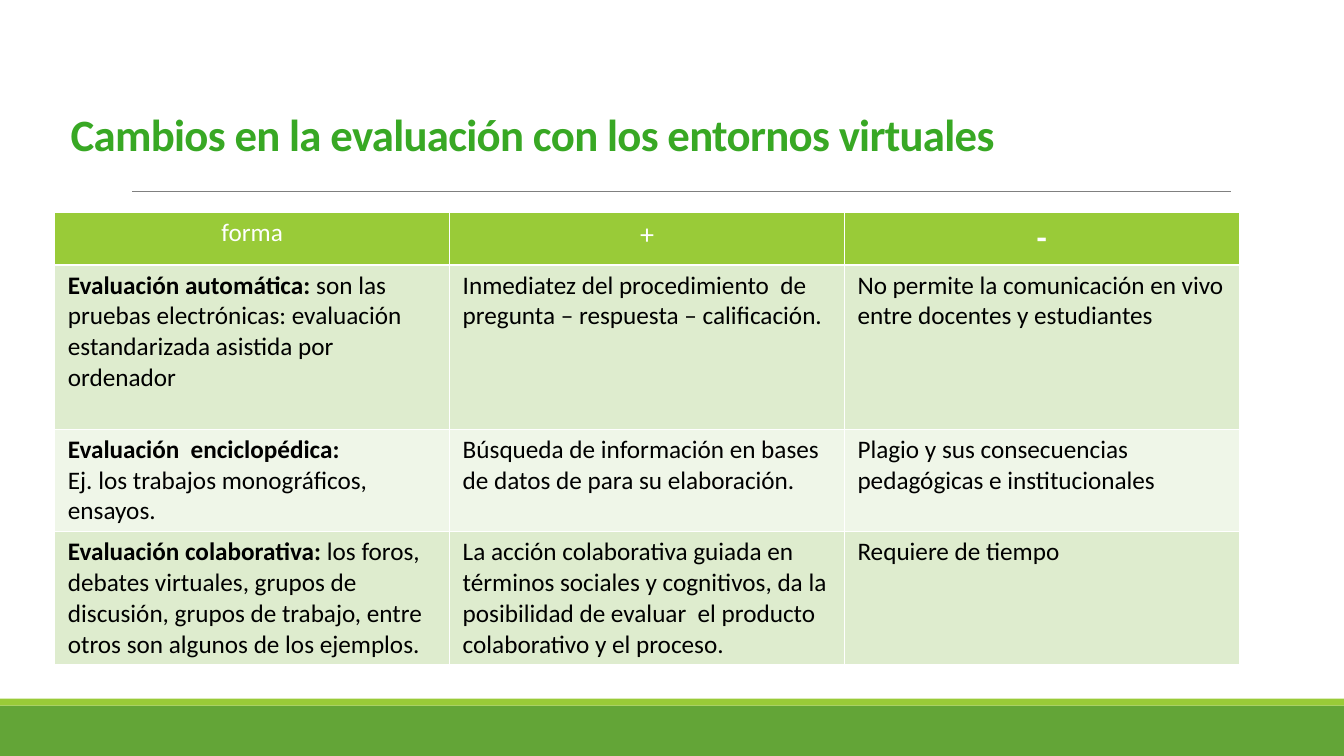
from lxml import etree
from pptx import Presentation
from pptx.dml.color import RGBColor
from pptx.enum.shapes import MSO_CONNECTOR, MSO_SHAPE
from pptx.enum.text import MSO_ANCHOR, PP_ALIGN
from pptx.oxml.ns import qn
from pptx.util import Inches, Pt

RECTANGLE = MSO_SHAPE.RECTANGLE
STRAIGHT = MSO_CONNECTOR.STRAIGHT
BOTTOM, TOP = MSO_ANCHOR.BOTTOM, MSO_ANCHOR.TOP
LEFT, CENTER = PP_ALIGN.LEFT, PP_ALIGN.CENTER

HEADINGS = [("forma", 18, False), ("+", 20, False), ("-", 24, True)]
ASSESSMENTS = [
    (
        [[("Evaluación automática: ", True),
          ("son las pruebas electrónicas: evaluación estandarizada asistida por ordenador", False)]],
        "Inmediatez del procedimiento  de pregunta – respuesta – calificación.",
        "No permite la comunicación en vivo entre docentes y estudiantes",
    ),
    (
        [[("Evaluación  enciclopédica:", True)],
         [("Ej. los trabajos monográficos, ensayos.", False)]],
        "Búsqueda de información en bases de datos de para su elaboración.",
        "Plagio y sus consecuencias pedagógicas e institucionales",
    ),
    (
        [[("Evaluación colaborativa: ", True),
          ("los foros, debates virtuales, grupos de discusión, grupos de trabajo, "
           "entre otros son algunos de los ejemplos.", False)]],
        "La acción colaborativa guiada en términos sociales y cognitivos, "
        "da la posibilidad de evaluar  el producto colaborativo y el proceso.",
        "Requiere de tiempo",
    ),
]
ROW_HEIGHTS = [6.93, 21.73, 12.67, 16.53]


def color(hex_code):
    return RGBColor.from_string(hex_code)


class GreenSlide:
    """Draws styled elements on one slide, with lengths in percent of its size."""

    font = "Calibri"
    lime, green, title_green = "99CB38", "63A537", "38A824"
    white, black, gray = "FFFFFF", "000000", "808080"
    bands = ["DEECCE", "EFF6E8"]

    def __init__(self, deck):
        self.width, self.height = deck.slide_width, deck.slide_height
        self.slide = deck.slides.add_slide(deck.slide_layouts[5])
        self.shapes = self.slide.shapes

    def x(self, share):
        return round(self.width * share / 100)

    def y(self, share):
        return round(self.height * share / 100)

    def place(self, left, top, width, height):
        return self.x(left), self.y(top), self.x(width), self.y(height)

    def add_run(self, paragraph, text, size, ink, bold=False):
        run = paragraph.add_run()
        run.text = text
        run.font.name, run.font.size, run.font.bold = self.font, Pt(size), bold
        run.font.color.rgb = color(ink)
        return run

    def band(self, top, height, fill):
        band = self.shapes.add_shape(RECTANGLE, *self.place(0, top, 100, height))
        band.shadow.inherit = False
        band.fill.solid()
        band.fill.fore_color.rgb = color(fill)
        band.line.fill.background()

    def rule(self, start, end, level):
        rule = self.shapes.add_connector(
            STRAIGHT, self.x(start), self.y(level), self.x(end), self.y(level))
        rule.line.color.rgb = color(self.gray)
        rule.line.width = Pt(0.5)
        etree.SubElement(rule._element.spPr, qn("a:effectLst"))

    def title(self, text, left, top, width, height):
        title = self.shapes.title
        title.left, title.top, title.width, title.height = self.place(left, top, width, height)
        frame = title.text_frame
        frame.word_wrap = True
        frame.vertical_anchor = BOTTOM
        paragraph = frame.paragraphs[0]
        paragraph.alignment, paragraph.line_spacing = LEFT, 0.85
        run = self.add_run(paragraph, text, 32, self.title_green, True)
        run.font._element.set("spc", "-50")

    def border(self, cell):
        properties = cell._tc.get_or_add_tcPr()
        for side in ("lnL", "lnR", "lnT", "lnB"):
            edge = etree.SubElement(properties, qn(f"a:{side}"), w=str(Pt(1)))
            fill = etree.SubElement(edge, qn("a:solidFill"))
            etree.SubElement(fill, qn("a:srgbClr"), val=self.white)

    def cell(self, cell, paragraphs, fill, ink, size=18, alignment=LEFT):
        self.border(cell)
        cell.fill.solid()
        cell.fill.fore_color.rgb = color(fill)
        cell.margin_left = cell.margin_right = Inches(0.13)
        cell.margin_top = cell.margin_bottom = Inches(0.05)
        cell.vertical_anchor = TOP
        frame = cell.text_frame
        for index, runs in enumerate(paragraphs):
            paragraph = frame.add_paragraph() if index else frame.paragraphs[0]
            paragraph.alignment = alignment
            for text, bold in runs:
                self.add_run(paragraph, text, size, ink, bold)

    def table(self, headings, assessments, row_heights, left, top, width):
        table = self.shapes.add_table(
            len(row_heights), len(headings),
            *self.place(left, top, width, sum(row_heights))).table
        for row, height in zip(table.rows, row_heights):
            row.height = self.y(height)
        for column, (text, size, bold) in enumerate(headings):
            self.cell(table.cell(0, column), [[(text, bold)]],
                      self.lime, self.white, size, CENTER)
        for row, (form, advantage, drawback) in enumerate(assessments, 1):
            contents = [form, [[(advantage, False)]], [[(drawback, False)]]]
            for column, paragraphs in enumerate(contents):
                self.cell(table.cell(row, column), paragraphs,
                          self.bands[(row - 1) % 2], self.black)


def main():
    deck = Presentation()
    deck.slide_width, deck.slide_height = Inches(13.33), Inches(7.5)
    page = GreenSlide(deck)
    page.band(93.33, 6.67, page.green)
    page.band(92.4, 0.93, page.lime)
    page.rule(9.83, 91.6, 25.33)
    page.title("Cambios en la evaluación con los entornos virtuales", 4.5, 2.53, 88.67, 19.33)
    page.table(HEADINGS, ASSESSMENTS, ROW_HEIGHTS, 4.08, 28.13, 88.13)
    deck.save("out.pptx")


if __name__ == "__main__":
    main()
